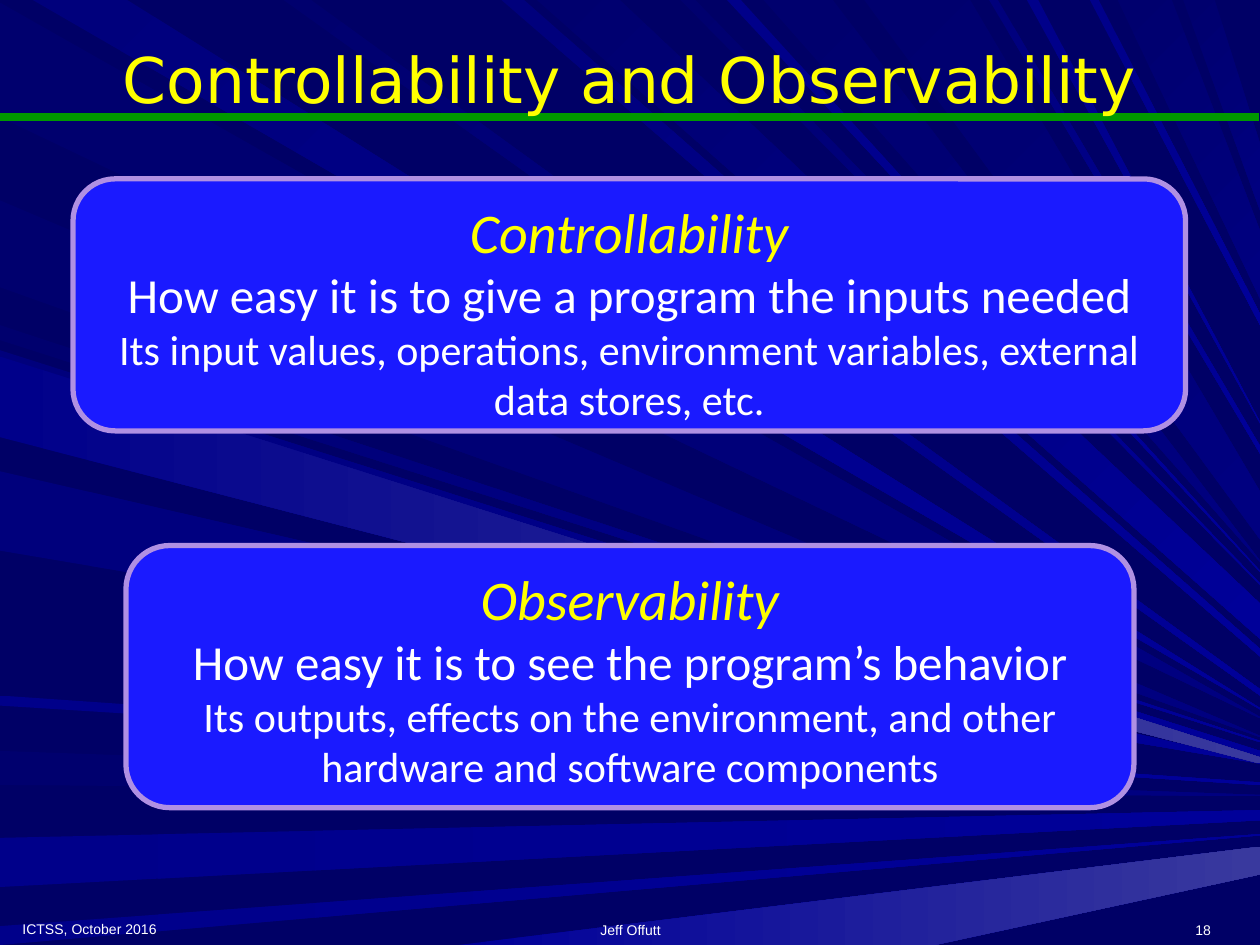
from lxml import etree
from pptx import Presentation
from pptx import util as u
from pptx.dml.color import RGBColor
from pptx.enum import shapes, text
from pptx.oxml.ns import qn

PX = 9144
WIDTH, HEIGHT = 1000, 750

BACKGROUND = RGBColor(0x00, 0x00, 0x66)
DARK = RGBColor(0x00, 0x00, 0x6E)
SOFT = RGBColor(0x00, 0x00, 0x7C)
MID = RGBColor(0x00, 0x00, 0x80)
CLEAR = RGBColor(0x00, 0x00, 0x8A)
BRIGHT = RGBColor(0x00, 0x00, 0x99)
PALE = RGBColor(0x39, 0x39, 0x9E)
GREEN = RGBColor(0x00, 0x99, 0x00)
YELLOW = RGBColor(0xFF, 0xFF, 0x00)
WHITE = RGBColor(0xFF, 0xFF, 0xFF)
PANEL = RGBColor(0x1A, 0x1A, 0xFF)
LILAC = RGBColor(0xB0, 0x90, 0xE3)

LEFT_RAYS = [
    (DARK, MID, 2, 93, 569, 1),
    (DARK, MID, 596, 623, 631, 1),
    (CLEAR, BRIGHT, 665, 704, 643, 8),
    (CLEAR, BRIGHT, 735, 750, 662, 1),
    (DARK, BRIGHT, 258, 270, 588, 1),
    (DARK, MID, 159, 228, 584, 1),
    (SOFT, BRIGHT, 278, 342, 596, 6),
    (SOFT, BRIGHT, 374, 437, 605, 1),
    (CLEAR, BRIGHT, 552, 560, 621, 2),
    (CLEAR, PALE, 283, 347, 601, 5),
]

TOP_RAYS = [
    (SOFT, BRIGHT, 26, 101, 562, 1),
    (SOFT, BRIGHT, 398, 416, 515, 6),
    (DARK, BRIGHT, 426, 492, 479, 28),
    (DARK, BRIGHT, 540, 552, 463, 1),
    (DARK, MID, 606, 661, 445, 1),
    (DARK, MID, 887, 930, 183, 54),
    (DARK, MID, 939, 964, 114, 53),
    (DARK, BRIGHT, 225, 247, 547, 5),
    (CLEAR, BRIGHT, 577, 588, 453, 1),
    (DARK, MID, 686, 770, 390, 38),
    (SOFT, BRIGHT, 785, 792, 354, 6),
    (CLEAR, BRIGHT, 815, 824, 335, 1),
    (CLEAR, BRIGHT, 865, 872, 249, 9),
]

PANELS = [
    ((58, 142, 883, 200), "Controllability",
     "How easy it is to give a program the inputs needed",
     "Its input values, operations, environment variables, external data stores, etc."),
    ((100, 433, 800, 208), "Observability",
     "How easy it is to see the program’s behavior",
     "Its outputs, effects on the environment, and other hardware and software components"),
]

FOOTERS = [
    ((8, 716, 233, 33), "ICTSS, October 2016", text.PP_ALIGN.LEFT),
    ((342, 717, 317, 33), "Jeff Offutt", text.PP_ALIGN.CENTER),
    ((758, 717, 213, 33), "18", text.PP_ALIGN.RIGHT),
]


def emu(*lengths):
    return [u.Emu(n * PX) for n in lengths]


def write(p, words, size, color=WHITE, font="Calibri", italic=False,
          align=text.PP_ALIGN.CENTER):
    p.alignment = align
    r = p.add_run()
    r.text = words
    r.font.size = u.Pt(size)
    r.font.name = font
    r.font.italic = italic
    r.font.color.rgb = color


def add_ray(group, start, end, angle, near, far, right, spread):
    points = [near, far, (WIDTH, right), (WIDTH, right + spread)]
    builder = group.shapes.build_freeform(*points[0], scale=PX)
    builder.add_line_segments(points[1:], close=True)
    sp = builder.convert_to_shape()
    sp.shadow.inherit = False
    sp.line.fill.background()
    sp.fill.gradient()
    sp.fill.gradient_angle = -angle % 360
    for stop, color in zip(sp.fill.gradient_stops, (start, end)):
        stop.color.rgb = color


def add_rays(s):
    group = s.shapes.add_group_shape()
    add_ray(group, BRIGHT, PALE, 0, (742, HEIGHT), (364, HEIGHT), 672, 22)
    for start, end, upper, lower, right, spread in LEFT_RAYS:
        add_ray(group, start, end, 0, (0, lower), (0, upper), right, spread)
    for start, end, first, last, right, spread in TOP_RAYS:
        add_ray(group, start, end, 45, (first, 0), (last, 0), right, spread)


def add_rule(s):
    line = s.shapes.add_connector(shapes.MSO_CONNECTOR.STRAIGHT, *emu(0, 93, 999, 93))
    line.line.color.rgb = GREEN
    line.line.width = u.Pt(4.5)
    etree.SubElement(line.element.spPr, qn("a:effectLst"))


def place_title(s, words):
    title = s.shapes.title
    s.shapes.element.append(title.element)
    title.left, title.top, title.width, title.height = emu(8, 0, 984, 125)
    tf = title.text_frame
    tf.auto_size = text.MSO_AUTO_SIZE.NONE
    tf.vertical_anchor = text.MSO_ANCHOR.MIDDLE
    write(tf.paragraphs[0], words, 36, color=YELLOW, font="DejaVu Sans")


def add_footer(s, box, words, align):
    tf = s.shapes.add_textbox(*emu(*box)).text_frame
    tf.word_wrap = True
    tf.vertical_anchor = text.MSO_ANCHOR.BOTTOM
    write(tf.paragraphs[0], words, 8, font="Arial", align=align)


def add_panel(s, box, heading, summary, detail):
    sp = s.shapes.add_shape(shapes.MSO_SHAPE.ROUNDED_RECTANGLE, *emu(*box))
    sp.shadow.inherit = False
    sp.fill.solid()
    sp.fill.fore_color.rgb = PANEL
    sp.line.color.rgb = LILAC
    sp.line.width = u.Pt(3)
    tf = sp.text_frame
    tf.word_wrap = True
    tf.vertical_anchor = text.MSO_ANCHOR.TOP
    write(tf.paragraphs[0], heading, 32, color=YELLOW, italic=True)
    write(tf.add_paragraph(), summary, 28)
    write(tf.add_paragraph(), detail, 24)


def main():
    prs = Presentation()
    prs.slide_width, prs.slide_height = emu(WIDTH, HEIGHT)
    s = prs.slides.add_slide(prs.slide_layouts[5])
    s.background.fill.solid()
    s.background.fill.fore_color.rgb = BACKGROUND
    add_rays(s)
    add_rule(s)
    place_title(s, "Controllability and Observability")
    for footer in FOOTERS:
        add_footer(s, *footer)
    for panel in PANELS:
        add_panel(s, *panel)
    prs.save("out.pptx")


if __name__ == "__main__":
    main()
